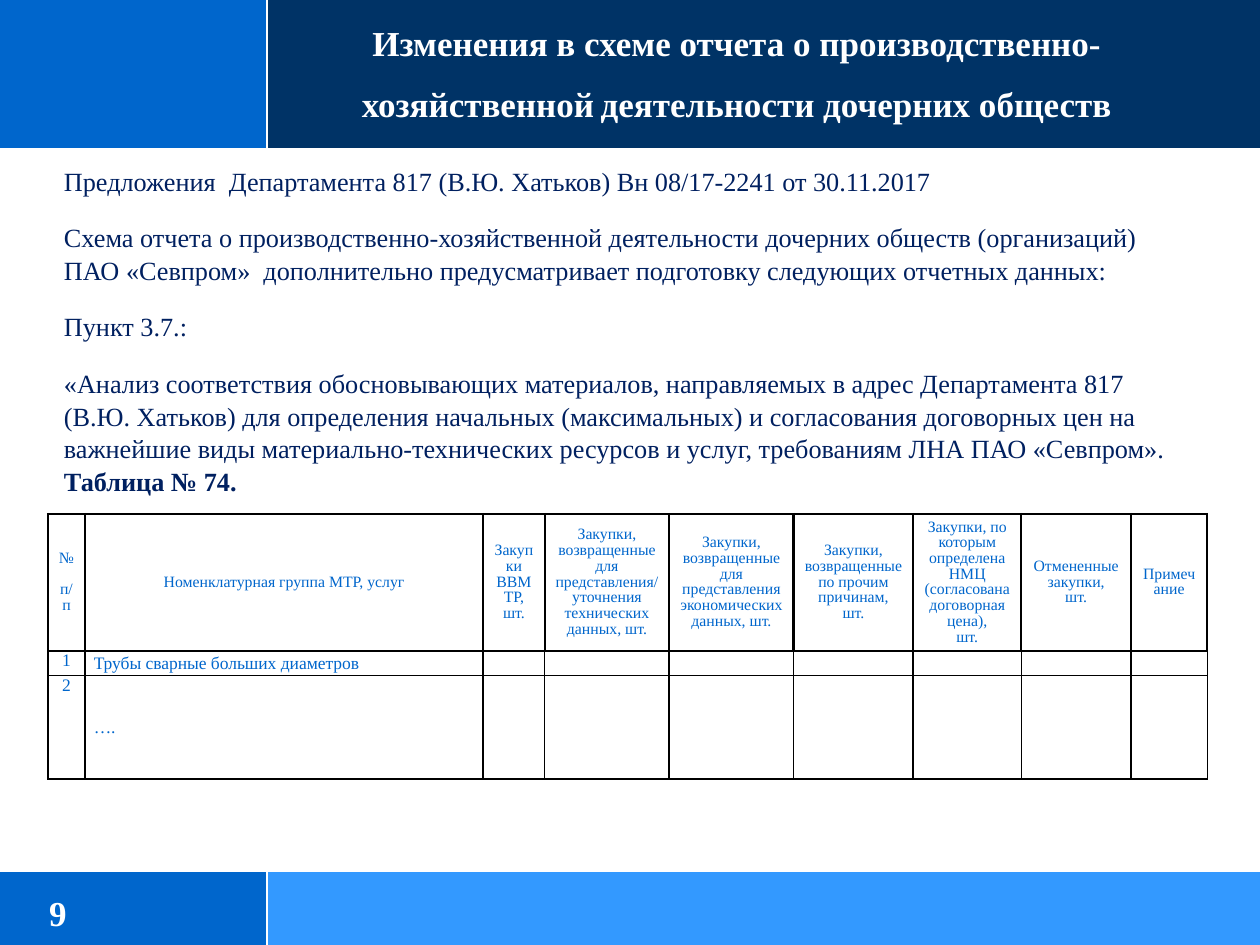
from lxml import etree
from pptx import Presentation
from pptx.dml.color import RGBColor
from pptx.enum import shapes, text
from pptx.oxml.ns import qn
from pptx.util import Cm, Pt

WHITE = RGBColor(0xFF, 0xFF, 0xFF)
BLUE = RGBColor(0x00, 0x66, 0xCC)
SKY = RGBColor(0x33, 0x99, 0xFF)
NAVY = RGBColor(0x00, 0x33, 0x66)
INK = RGBColor(0x00, 0x20, 0x60)
BLACK = RGBColor(0x00, 0x00, 0x00)

WIDTH, HEIGHT = 25.4, 19.05
SPLIT = 5.38
HEADER_BOTTOM, FOOTER_TOP = 3.0, 17.55

TITLE = [
    ["Изменения в схеме отчета о производственно-"],
    ["хозяйственной", " ", "деятельности дочерних обществ"],
]
PROPOSALS = [
    ["Предложения  Департамента 817 (В.Ю. Хатьков) Вн 08/17-2241 от 30.11.2017"],
    ["Схема отчета о производственно-хозяйственной деятельности дочерних обществ "
     "(организаций) ПАО «Севпром»  дополнительно предусматривает подготовку "
     "следующих отчетных данных:"],
    ["Пункт 3.7.:"],
    ["«Анализ соответствия обосновывающих материалов, направляемых в адрес "
     "Департамента 817 (В.Ю. Хатьков) для определения начальных (максимальных) и "
     "согласования договорных цен на важнейшие виды материально-технических "
     "ресурсов и услуг, требованиям ЛНА ПАО «Севпром». ", "Таблица № 74."],
]
COLUMNS = [
    (0.74, ["№", "п/п"]),
    (8.03, ["Номенклатурная группа МТР, услуг"]),
    (1.24, ["Закупки ВВМТР, шт."]),
    (2.51, ["Закупки, возвращенные для представления/",
            "уточнения технических данных, шт."]),
    (2.51, ["Закупки, возвращенные для представления экономических данных, шт."]),
    (2.41, ["Закупки, возвращенные по прочим причинам,", "шт."]),
    (2.18, ["Закупки, по которым определена НМЦ (согласована договорная цена),",
            "шт."]),
    (2.21, ["Отмененные закупки,", "шт."]),
    (1.54, ["Примечание"]),
]
ITEMS = ["Трубы сварные больших диаметров", "…."]
ROW_HEIGHTS = [2.76, 0.5, 2.08]


class ReportSlide:
    font = "Times New Roman"

    def __init__(self, slide):
        self.slide = slide

    def band(self, left, top, width, height, color):
        band = self.slide.shapes.add_shape(
            shapes.MSO_SHAPE.RECTANGLE, Cm(left), Cm(top), Cm(width), Cm(height))
        band.shadow.inherit = False
        band.fill.solid()
        band.fill.fore_color.rgb = color
        band.line.fill.background()

    def rule(self, x1, y1, x2, y2):
        rule = self.slide.shapes.add_connector(
            shapes.MSO_CONNECTOR.STRAIGHT, Cm(x1), Cm(y1), Cm(x2), Cm(y2))
        rule.line.color.rgb = WHITE
        rule.line.width = Pt(1.25)
        etree.SubElement(rule._element.spPr, qn("a:effectLst"))

    def style(self, paragraph, size, color, bold=False, align=text.PP_ALIGN.LEFT):
        paragraph.alignment = align
        font = paragraph.font
        font.name, font.size, font.bold = self.font, Pt(size), bold
        font.color.rgb = color

    def textbox(self, left, top, width, height, paragraphs, size, color,
                bold=False, align=text.PP_ALIGN.LEFT, wrap=True, before=0):
        """Add a text box; each paragraph is a list of run texts."""
        box = self.slide.shapes.add_textbox(Cm(left), Cm(top), Cm(width), Cm(height))
        frame = box.text_frame
        frame.word_wrap = wrap
        for i, runs in enumerate(paragraphs):
            paragraph = frame.add_paragraph() if i else frame.paragraphs[0]
            self.style(paragraph, size, color, bold, align)
            paragraph.space_before = Pt(before if i else 0)
            for words in runs:
                paragraph.add_run().text = words
        return frame

    def border(self, cell, **widths):
        """Draw black cell edges; widths in points by side L, R, T, B."""
        for side, width in widths.items():
            edge = etree.SubElement(cell._tc.get_or_add_tcPr(), qn(f"a:ln{side}"),
                                    w=str(Pt(width)))
            fill = etree.SubElement(edge, qn("a:solidFill"))
            etree.SubElement(fill, qn("a:srgbClr"), val=str(BLACK))

    def cell(self, cell, lines, size, align, anchor, spacing=1.0):
        cell.margin_left = cell.margin_right = Cm(0.18)
        cell.margin_top = cell.margin_bottom = 0
        cell.vertical_anchor = anchor
        frame = cell.text_frame
        for i, line in enumerate(lines):
            paragraph = frame.add_paragraph() if i else frame.paragraphs[0]
            self.style(paragraph, size, BLUE, align=align)
            paragraph.line_spacing = spacing
            if line:
                paragraph.add_run().text = line
            else:
                etree.SubElement(paragraph._p, qn("a:endParaRPr"), sz=str(size * 100))

    def table(self, left, top):
        width = sum(w for w, _ in COLUMNS)
        table = self.slide.shapes.add_table(
            len(ROW_HEIGHTS), len(COLUMNS), Cm(left), Cm(top),
            Cm(width), Cm(sum(ROW_HEIGHTS))).table
        table.first_row = table.horz_banding = False
        for row, height in zip(table.rows, ROW_HEIGHTS):
            row.height = Cm(height)
        center, middle = text.PP_ALIGN.CENTER, text.MSO_ANCHOR.MIDDLE
        for c, (col_width, heading) in enumerate(COLUMNS):
            table.columns[c].width = Cm(col_width)
            self.cell(table.cell(0, c), heading, 9, center, middle, 0.9)
            for r, item in enumerate(ITEMS, 1):
                if c == 0:
                    self.cell(table.cell(r, c), [str(r)], 10, center,
                              text.MSO_ANCHOR.TOP)
                else:
                    self.cell(table.cell(r, c), [item if c == 1 else ""], 10,
                              text.PP_ALIGN.LEFT, middle)
            for r in range(len(ROW_HEIGHTS)):
                side = 1 if r else 1.5
                self.border(table.cell(r, c), L=side, R=side,
                            T=1.5 if r < 2 else 1, B=side)
                table.cell(r, c).fill.background()
        table.cell(0, 0).text_frame.paragraphs[1].space_before = Pt(9)


def main():
    prs = Presentation()
    prs.slide_width, prs.slide_height = Cm(WIDTH), Cm(HEIGHT)
    page = ReportSlide(prs.slides.add_slide(prs.slide_layouts[6]))

    for top, bottom, right_color in ((FOOTER_TOP, HEIGHT, SKY),
                                     (0, HEADER_BOTTOM, NAVY)):
        page.band(0, top, SPLIT, bottom - top, BLUE)
        page.band(SPLIT, top, WIDTH - SPLIT, bottom - top, right_color)
        page.rule(SPLIT, top, SPLIT, bottom)
    for y in (FOOTER_TOP, HEADER_BOTTOM):
        page.rule(0, y, WIDTH, y)

    proposals = page.textbox(1.04, 3.18, 23.24, 6.98, PROPOSALS, 15, INK, before=7.5)
    for paragraph in proposals.paragraphs:
        paragraph.space_after = Pt(6)
        paragraph.line_spacing = 1.04
    proposals.paragraphs[-1].runs[-1].font.bold = True

    number = page.textbox(0.99, 17.73, 4.14, 1.32, [["9"]], 20, WHITE, bold=True)
    number.margin_left = number.margin_right = 0
    number.margin_top = number.margin_bottom = 0
    number.vertical_anchor = text.MSO_ANCHOR.MIDDLE

    title = page.textbox(6.98, 0.3, 15.75, 2.39, TITLE, 20, WHITE, bold=True,
                         align=text.PP_ALIGN.CENTER, wrap=False, before=11)
    gap = title.paragraphs[1].runs[1].font
    gap.name, gap.size, gap.bold = "Arial Narrow", Pt(16), False

    page.table(0.97, 10.36)
    prs.save("out.pptx")


if __name__ == "__main__":
    main()
